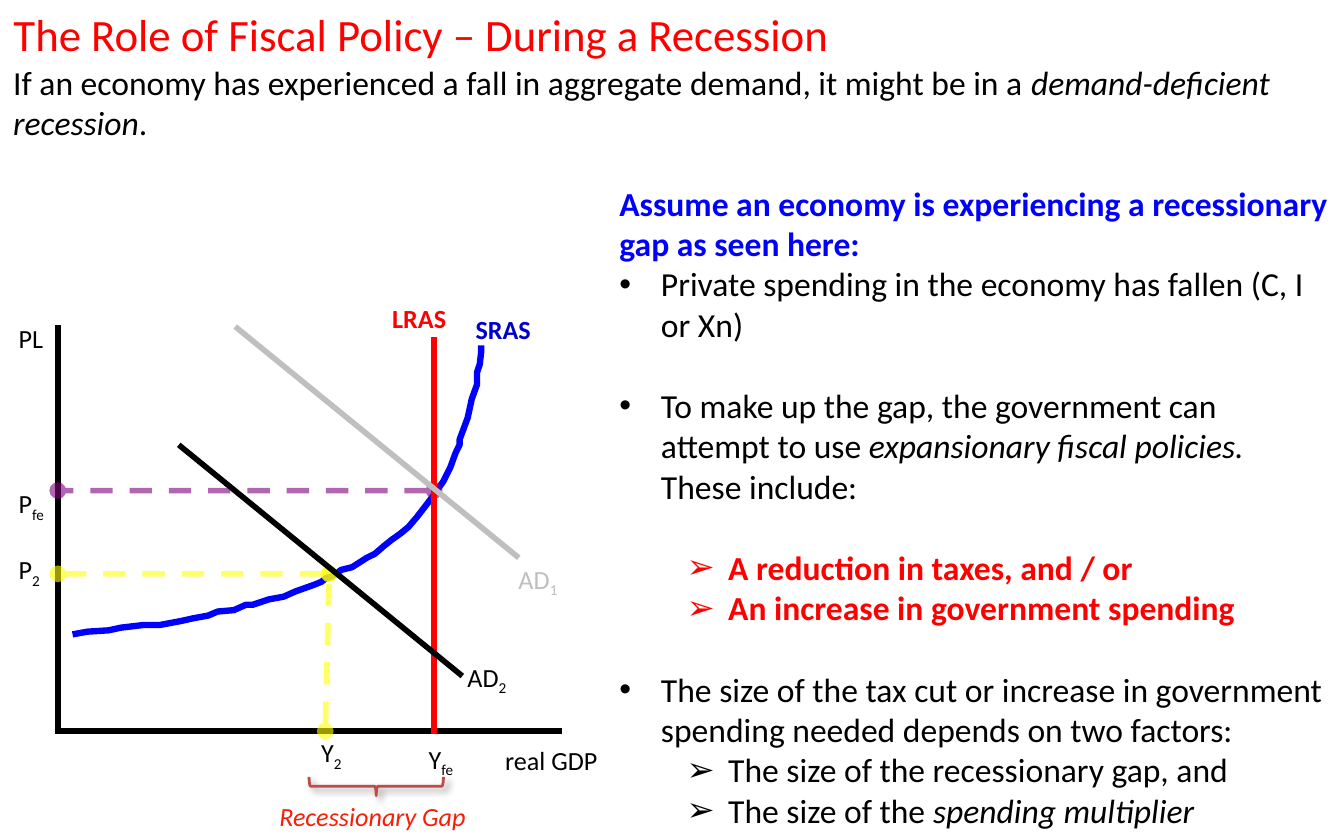
from lxml.etree import SubElement
from pptx import Presentation
from pptx.dml.color import RGBColor
from pptx.enum.dml import MSO_LINE_DASH_STYLE as Dash
from pptx.enum.shapes import MSO_CONNECTOR as Connector, MSO_SHAPE as Shape
from pptx.enum.text import MSO_ANCHOR as Anchor, MSO_AUTO_SIZE as AutoSize, PP_ALIGN as Align
from pptx.oxml.ns import qn
from pptx.util import Inches, Pt

BLACK = RGBColor(0x00, 0x00, 0x00)
RED = RGBColor(0xFF, 0x00, 0x00)
BLUE = RGBColor(0x00, 0x00, 0xFF)
NAVY = RGBColor(0x00, 0x00, 0xCC)
GREY = RGBColor(0xBF, 0xBF, 0xBF)
PURPLE = RGBColor(0x80, 0x00, 0x80)
YELLOW = RGBColor(0xFF, 0xFF, 0x00)
GAP_RED = RGBColor(0xF8, 0x1D, 0x06)
BRACE_RED = RGBColor(0xBF, 0x4C, 0x48)

ITALIC = {"italic": True}
BOLD = {"bold": True}
BULLET, ARROW = ("•", 0.31, 0), ("➢", 0.81, 1)
BLANK_LINE = 22  # height of one 18 pt line, in points


class FiscalSlide:
    font_name = "Calibri"
    label_size, body_size, title_size = 14, 18, 24
    line_width = 3

    def __init__(self, slide):
        self.slide = slide

    def _runs(self, paragraph, runs, size, color, **base):
        for text, extra in runs:
            run = paragraph.add_run()
            run.text = text
            run.font.color.rgb = color
            formats = {"name": self.font_name, "size": Pt(size), **base, **extra}
            baseline = formats.pop("baseline", None)
            for name, value in formats.items():
                setattr(run.font, name, value)
            if baseline:
                run._r.get_or_add_rPr().set("baseline", str(baseline))

    def _place(self, shape, left, top, width, height):
        box = {"left": left, "top": top, "width": width, "height": height}
        for name, value in box.items():
            setattr(shape, name, Inches(value))

    def title(self, text, *box):
        heading = self.slide.shapes.title
        self._place(heading, *box)
        frame = heading.text_frame
        frame.auto_size, frame.vertical_anchor = AutoSize.NONE, Anchor.TOP
        frame.paragraphs[0].alignment = Align.LEFT
        self._runs(frame.paragraphs[0], [(text, {})], self.title_size, RED)

    def text(self, box, runs, size=label_size, color=BLACK, **base):
        frame = self.slide.shapes.add_textbox(*map(Inches, box)).text_frame
        frame.word_wrap = True
        self._runs(frame.paragraphs[0], runs, size, color, **base)
        return frame

    def label(self, left, top, width, text, sub="", color=BLACK, **base):
        runs = [(text, {})] + ([(sub, {"baseline": -25000})] if sub else [])
        self.text((left, top, width, 0.34), runs, color=color, **base)

    def item(self, frame, bullet, runs, space=0, color=BLACK, **base):
        char, margin, level = bullet
        paragraph = frame.add_paragraph()
        paragraph.level = level
        paragraph.space_before = Pt(space)
        props = paragraph._p.get_or_add_pPr()
        props.set("marL", str(Inches(margin)))
        props.set("indent", str(Inches(-0.31)))
        SubElement(props, qn("a:buFont"), typeface="Arial")
        SubElement(props, qn("a:buChar"), char=char)
        self._runs(paragraph, runs, self.body_size, color, **base)

    def line(self, start, end, color=BLACK):
        connector = self.slide.shapes.add_connector(
            Connector.STRAIGHT, *map(Inches, (*start, *end)))
        connector.line.color.rgb = color
        connector.line.width = Pt(self.line_width)
        SubElement(connector._element.spPr, qn("a:effectLst"))
        return connector

    def guide(self, start, end, color):
        """Dashed, see-through line with a dot at each end."""
        connector = self.line(start, end, color)
        connector.line.dash_style = Dash.DASH
        outline = connector.line._get_or_add_ln()
        SubElement(outline.find(".//" + qn("a:srgbClr")), qn("a:alpha"), val="60000")
        for end_tag in ("a:headEnd", "a:tailEnd"):
            SubElement(outline, qn(end_tag), type="oval")

    def curve(self, points, color):
        start, *rest = [tuple(map(Inches, point)) for point in points]
        builder = self.slide.shapes.build_freeform(*start)
        builder.add_line_segments(rest, close=False)
        shape = builder.convert_to_shape()
        shape.shadow.inherit = False
        shape.fill.background()
        shape.line.color.rgb = color
        shape.line.width = Pt(3.39)

    def brace(self, box, color):
        shape = self.slide.shapes.add_shape(Shape.LEFT_BRACE, *map(Inches, box))
        shape.rotation = 270
        shape.fill.background()
        shape.line.color.rgb = color
        shape.line.width = Pt(1.5)
        shape.shadow.inherit = False
        effects = shape._element.spPr.find(qn("a:effectLst"))
        shadow = SubElement(effects, qn("a:outerShdw"), blurRad=str(Pt(4)),
                            dist=str(Pt(3)), dir="2700000", rotWithShape="0")
        shade = SubElement(shadow, qn("a:srgbClr"), val="000000")
        SubElement(shade, qn("a:alpha"), val="40000")


SRAS_POINTS = [
    (0.54, 4.72), (0.65, 4.7), (0.81, 4.69), (0.9, 4.67), (1.07, 4.65), (1.19, 4.65),
    (1.35, 4.62), (1.44, 4.6), (1.55, 4.58), (1.62, 4.55), (1.74, 4.54), (1.83, 4.5),
    (1.88, 4.5), (2, 4.46), (2.11, 4.44), (2.2, 4.4), (2.34, 4.35), (2.39, 4.33),
    (2.43, 4.3), (2.47, 4.29), (2.54, 4.24), (2.62, 4.22), (2.73, 4.15), (2.79, 4.12),
    (2.86, 4.06), (2.91, 4.02), (2.98, 3.97), (3.04, 3.92), (3.1, 3.85), (3.17, 3.76),
    (3.23, 3.68), (3.3, 3.58), (3.35, 3.48), (3.39, 3.37), (3.42, 3.31), (3.42, 3.27),
    (3.45, 3.19), (3.48, 3.11), (3.51, 2.97), (3.55, 2.86), (3.55, 2.77), (3.57, 2.71),
    (3.58, 2.62), (3.58, 2.57),
]


def main():
    deck = Presentation()
    deck.slide_width, deck.slide_height = Inches(10), Inches(6.25)
    page = FiscalSlide(deck.slides.add_slide(deck.slide_layouts[5]))

    # Heading and introduction
    page.title("The Role of Fiscal Policy – During a Recession", 0, 0, 10, 0.5)
    page.text((0, 0.41, 10, 0.7), [
        ("If an economy has experienced a fall in aggregate demand, it might be in a ", {}),
        ("demand-deficient recession", ITALIC), (".", {})], page.body_size)

    # Axes
    page.line((0.43, 2.42), (0.43, 5.43))
    page.line((0.41, 5.44), (4.18, 5.44))
    page.label(0.04, 2.35, 0.69, "PL")
    page.label(3.66, 5.49, 1.15, "real GDP")

    # Short-run supply
    page.label(3.44, 2.28, 0.76, "SRAS", color=NAVY, bold=True)
    page.curve(SRAS_POINTS, BLUE)

    # Equilibrium guides and their axis labels
    full_employment, recession, output = (3.23, 3.65), (2.45, 4.27), (2.42, 5.44)
    page.guide(full_employment, (0.43, 3.65), PURPLE)
    page.guide(recession, (0.43, 4.27), YELLOW)
    page.guide(output, recession, YELLOW)
    page.label(0.04, 3.58, 0.48, "P", "fe")
    page.label(0.04, 4.07, 0.48, "P", "2")
    page.label(3.09, 5.48, 0.51, "Y", "fe")
    page.label(2.29, 5.43, 0.48, "Y", "2")

    # Long-run supply
    page.label(2.82, 2.2, 0.76, "LRAS", color=RED, bold=True)
    page.line((3.23, 5.46), (3.23, 2.51), RED)

    # Aggregate demand before and after the fall
    for number, left, top, label_at, color in (
            ("1", 1.75, 2.43, (3.76, 4.14), GREY),
            ("2", 1.33, 3.31, (3.38, 4.87), BLACK)):
        page.line((left, top), (left + 2.11, top + 1.72), color)
        page.label(*label_at, 0.76, "AD", number, color)

    # Recessionary gap
    page.brace((2.73, 5.35, 0.14, 1), BRACE_RED)
    page.label(1.98, 5.91, 2, "Recessionary Gap", color=GAP_RED, italic=True)

    # Explanation
    notes = page.text((4.51, 1.31, 5.49, 4.95), [
        ("Assume an economy is experiencing a recessionary gap as seen here:", BOLD)],
        page.body_size, BLUE)
    page.item(notes, BULLET, [
        ("Private spending in the economy has fallen (C, I or Xn)", {})])
    page.item(notes, BULLET, [
        ("To make up the gap, the government can attempt to use ", {}),
        ("expansionary fiscal policies.", ITALIC), (" These include:", {})], BLANK_LINE)
    page.item(notes, ARROW, [("A reduction in taxes, and / or", BOLD)], BLANK_LINE, RED)
    page.item(notes, ARROW, [("An increase in government spending", BOLD)], color=RED)
    page.item(notes, BULLET, [
        ("The size of the tax cut or increase in government spending needed "
         "depends on two factors:", {})], BLANK_LINE)
    page.item(notes, ARROW, [("The size of the recessionary gap, and", {})])
    page.item(notes, ARROW, [("The size of the ", {}), ("spending multiplier", ITALIC)])

    deck.save("out.pptx")


if __name__ == "__main__":
    main()
